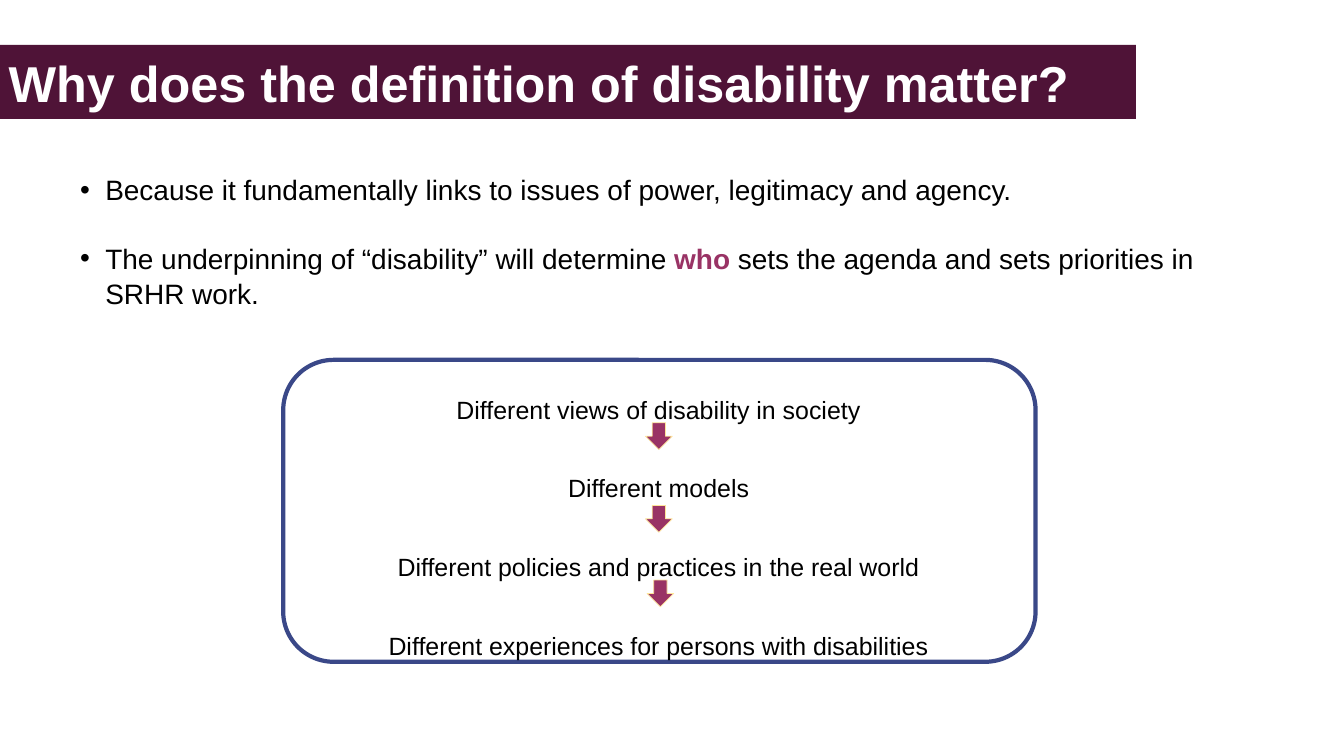
from lxml import etree
from pptx import Presentation
from pptx.dml.color import RGBColor
from pptx.enum.shapes import MSO_SHAPE
from pptx.enum.text import MSO_ANCHOR, MSO_AUTO_SIZE, PP_ALIGN
from pptx.oxml.ns import qn
from pptx.util import Inches, Pt

ROUNDED_FRAME = MSO_SHAPE.FLOWCHART_ALTERNATE_PROCESS
DOWN_ARROW = MSO_SHAPE.DOWN_ARROW
MIDDLE, TOP = MSO_ANCHOR.MIDDLE, MSO_ANCHOR.TOP
NO_FIT, GROW = MSO_AUTO_SIZE.NONE, MSO_AUTO_SIZE.SHAPE_TO_FIT_TEXT
LEFT, CENTER = PP_ALIGN.LEFT, PP_ALIGN.CENTER

PLUM, MAGENTA, NAVY = "4F1337", "993365", "3A4888"
CREAM, BLACK, WHITE = "FEE599", "000000", "FFFFFF"


def rgb(value):
    return RGBColor.from_string(value)


def write(frame, paragraphs, size, color=BLACK, bold=False, align=LEFT, anchor=TOP,
          insets=(0.1, 0.1, 0.1, 0.1), fit=NO_FIT, spacing=1.0, gap=0, bullet=False):
    """Fill a text frame; each paragraph is a list of (text, highlighted) runs."""
    frame.word_wrap = True
    frame.auto_size = fit
    frame.vertical_anchor = anchor
    (frame.margin_left, frame.margin_top,
     frame.margin_right, frame.margin_bottom) = map(Inches, insets)
    for index, runs in enumerate(paragraphs):
        paragraph = frame.add_paragraph() if index else frame.paragraphs[0]
        if bullet:
            properties = paragraph._p.get_or_add_pPr()
            properties.set("marL", str(Inches(0.5)))
            properties.set("indent", str(Inches(-0.5)))
            bullet_color = etree.SubElement(properties, qn("a:buClr"))
            etree.SubElement(bullet_color, qn("a:srgbClr"), val=color)
            etree.SubElement(properties, qn("a:buFont"), typeface="Arial")
            etree.SubElement(properties, qn("a:buChar"), char="•")
        paragraph.alignment = align
        paragraph.line_spacing = spacing
        paragraph.space_before = Pt(gap if index else 0)
        for text, highlighted in runs:
            run = paragraph.add_run()
            run.text = text
            run.font.name = "Arial"
            run.font.size = Pt(size)
            run.font.bold = bold or highlighted
            run.font.color.rgb = rgb(MAGENTA if highlighted else color)


prs = Presentation()
prs.slide_width, prs.slide_height = Inches(26.67), Inches(15)
slide = prs.slides.add_slide(prs.slide_layouts[5])

# Title band
title = slide.shapes.title
title.left, title.top = Inches(0), Inches(0.89)
title.width, title.height = Inches(22.54), Inches(1.47)
title.fill.solid()
title.fill.fore_color.rgb = rgb(PLUM)
write(title.text_frame, [[("Why does the definition of disability matter?", False)]],
      size=72, color=WHITE, bold=True, anchor=MIDDLE, insets=(0.17, 0.06, 0.06, 0.06))

# Reasons
reasons = slide.shapes.add_textbox(Inches(1.49), Inches(3.3), Inches(23.32), Inches(2.9))
write(reasons.text_frame, [
    [("Because it fundamentally links to issues of power, legitimacy and agency.", False)],
    [("The underpinning of “disability” will determine ", False), ("who", True),
     (" sets the agenda and sets priorities in SRHR work.", False)],
], size=40, fit=GROW, spacing=1.04, gap=48, bullet=True)

# Chain from views to experiences
frame = slide.shapes.add_shape(ROUNDED_FRAME, Inches(5.62), Inches(7.14),
                               Inches(14.93), Inches(5.99))
frame.shadow.inherit = False
frame.fill.background()
frame.line.color.rgb = rgb(NAVY)
frame.line.width = Pt(6)

steps = [
    "Different views of disability in society",
    "Different models",
    "Different policies and practices in the real world",
    "Different experiences for persons with disabilities",
]
chain = slide.shapes.add_textbox(Inches(5.76), Inches(7.22), Inches(14.62), Inches(5.83))
write(chain.text_frame, [[(step, False)] for step in steps], size=35.6,
      align=CENTER, insets=(0.1, 0.6, 0.1, 0.05), gap=70)

for left, top in [(12.81, 8.39), (12.81, 10.03), (12.84, 11.51)]:
    arrow = slide.shapes.add_shape(DOWN_ARROW, Inches(left), Inches(top),
                                   Inches(0.53), Inches(0.53))
    arrow.shadow.inherit = False
    arrow.fill.solid()
    arrow.fill.fore_color.rgb = rgb(MAGENTA)
    arrow.line.color.rgb = rgb(CREAM)
    arrow.line.width = Pt(1)

prs.save("out.pptx")
